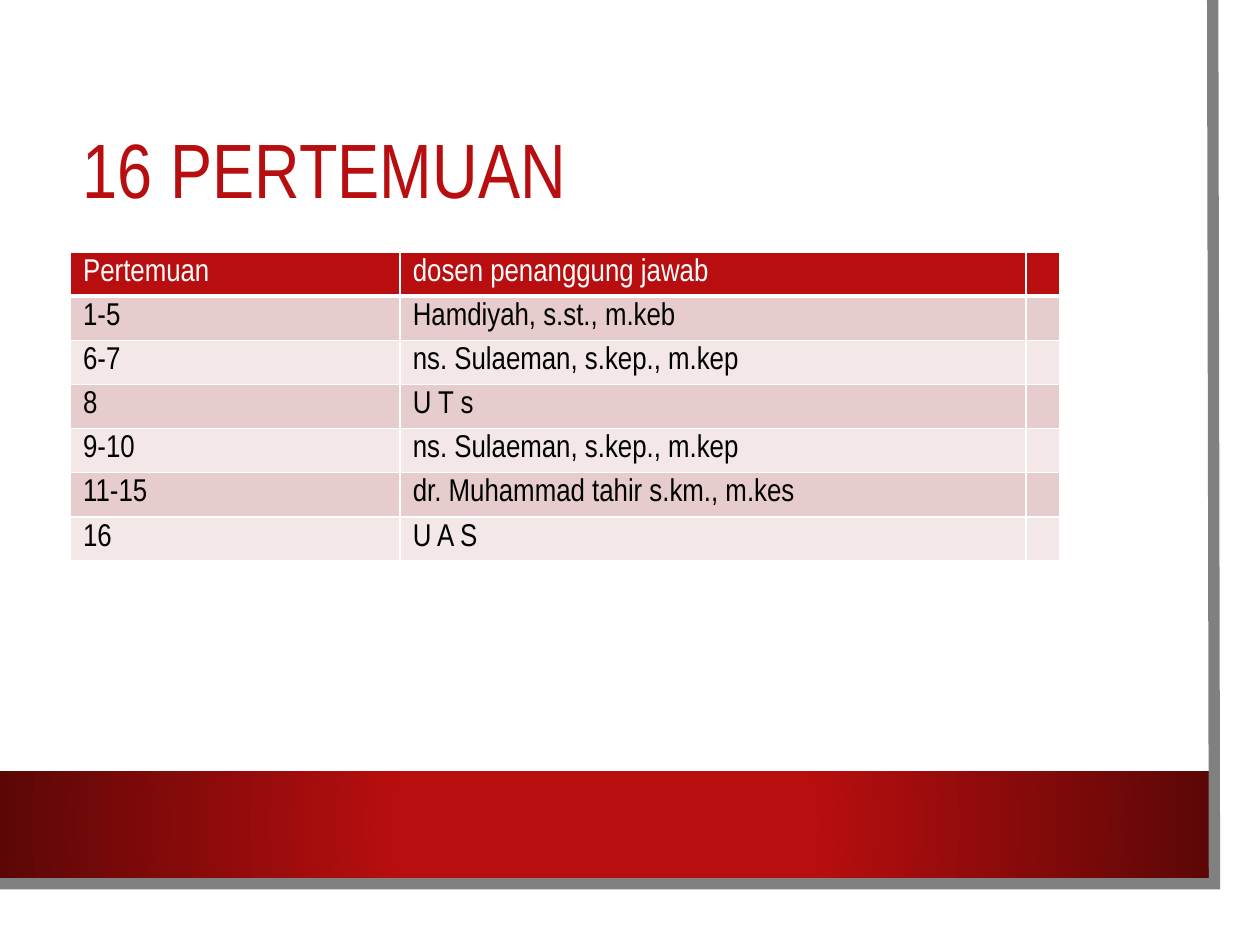
from typing import NamedTuple

from lxml.etree import SubElement
from pptx import Presentation
from pptx.dml.color import RGBColor
from pptx.enum.shapes import MSO_SHAPE as Preset
from pptx.enum.text import MSO_ANCHOR as Anchor
from pptx.oxml import parse_xml
from pptx.oxml.ns import nsdecls, qn
from pptx.util import Pt

RED = RGBColor(0xB8, 0x0E, 0x0F)
DARK_RED = RGBColor(0x5C, 0x07, 0x07)
GRAY = RGBColor(0x80, 0x80, 0x80)
WHITE = RGBColor(0xFF, 0xFF, 0xFF)
BLACK = RGBColor(0, 0, 0)
ROSE = RGBColor(0xE6, 0xCC, 0xCC)
PALE_ROSE = RGBColor(0xF3, 0xE7, 0xE7)
FONT = "Arial Narrow"
COLUMN_WIDTHS = (188.4, 357.6, 19.4)
ROW_HEIGHT = 25.2
TEXT_INSET = 3.6


class Meeting(NamedTuple):
    number: str
    lecturer: str


class RowStyle(NamedTuple):
    fill: RGBColor
    ink: RGBColor
    top: float
    bottom: float


MEETINGS = (
    Meeting("Pertemuan", "dosen penanggung jawab"),
    Meeting("1-5", "Hamdiyah, s.st., m.keb"),
    Meeting("6-7", "ns. Sulaeman, s.kep., m.kep"),
    Meeting("8", "U T s"),
    Meeting("9-10", "ns. Sulaeman, s.kep., m.kep"),
    Meeting("11-15", "dr. Muhammad tahir s.km., m.kes"),
    Meeting("16", "U A S"),
)


def style_for(row: int) -> RowStyle:
    if row == 0:
        return RowStyle(RED, WHITE, 1, 3)
    return RowStyle(ROSE if row % 2 else PALE_ROSE, BLACK, 3 if row == 1 else 1, 1)


def set_font(paragraph, size: float, color: RGBColor) -> None:
    paragraph.font.name = FONT
    paragraph.font.size = Pt(size)
    paragraph.font.bold = False
    paragraph.font.color.rgb = color


def add_band(slide) -> None:
    band = slide.shapes.add_shape(Preset.RECTANGLE, Pt(0), Pt(440.6), Pt(691.2), Pt(61.2))
    band.shadow.inherit = False
    band.line.fill.background()
    band.fill.gradient()
    for stop, position, color in zip(band.fill.gradient_stops, (0.34, 1), (RED, DARK_RED)):
        stop.position = position
        stop.color.rgb = color
    gradient = band._element.spPr.find(qn("a:gradFill"))
    gradient.replace(gradient.find(qn("a:lin")), parse_xml(
        f'<a:path {nsdecls("a")} path="circle">'
        '<a:fillToRect l="50000" t="50000" r="50000" b="50000"/></a:path>'))


def add_page_edge(slide) -> None:
    builder = slide.shapes.build_freeform(692.6, 0, scale=Pt(1))
    builder.add_line_segments([(694.1, 505.4), (-1.4, 504.7)], close=False)
    edge = builder.convert_to_shape()
    edge.shadow.inherit = False
    edge.fill.background()
    edge.line.color.rgb = GRAY
    edge.line.width = Pt(6.5)
    SubElement(edge._element.spPr.find(qn("a:ln")), qn("a:miter"), lim="800000")


def add_title(slide, text: str) -> None:
    title = slide.shapes.add_textbox(Pt(40.3), Pt(54), Pt(614.2), Pt(90.7)).text_frame
    title.word_wrap = True
    title.vertical_anchor = Anchor.MIDDLE
    title.text = text
    title.paragraphs[0].line_spacing = 0.9
    set_font(title.paragraphs[0], 44, RED)


def add_borders(cell, style: RowStyle) -> None:
    properties = cell._tc.get_or_add_tcPr()
    sides = (("L", 1), ("R", 1), ("T", style.top), ("B", style.bottom))
    for side, width in sides:
        border = SubElement(properties, qn(f"a:ln{side}"), w=str(Pt(width)))
        SubElement(SubElement(border, qn("a:solidFill")), qn("a:srgbClr"), val=str(WHITE))


def fill_cell(cell, text: str, style: RowStyle) -> None:
    add_borders(cell, style)
    cell.fill.solid()
    cell.fill.fore_color.rgb = style.fill
    cell.margin_top = Pt(TEXT_INSET if text else 0)
    cell.margin_bottom = Pt(0)
    cell.text = text
    set_font(cell.text_frame.paragraphs[0], 18, style.ink)


def add_schedule(slide) -> None:
    schedule = slide.shapes.add_table(
        len(MEETINGS), len(COLUMN_WIDTHS), Pt(40.3), Pt(144),
        Pt(sum(COLUMN_WIDTHS)), Pt(ROW_HEIGHT * len(MEETINGS))).table
    for column, width in zip(schedule.columns, COLUMN_WIDTHS):
        column.width = Pt(width)
    for index, (row, meeting) in enumerate(zip(schedule.rows, MEETINGS)):
        row.height = Pt(ROW_HEIGHT)
        for cell, text in zip(row.cells, (*meeting, "")):
            fill_cell(cell, text, style_for(index))


def main() -> None:
    deck = Presentation()
    deck.slide_width, deck.slide_height = Pt(720), Pt(540)
    slide = deck.slides.add_slide(deck.slide_layouts[6])
    add_band(slide)
    add_page_edge(slide)
    add_title(slide, "16 PERTEMUAN")
    add_schedule(slide)
    deck.save("out.pptx")


if __name__ == "__main__":
    main()
